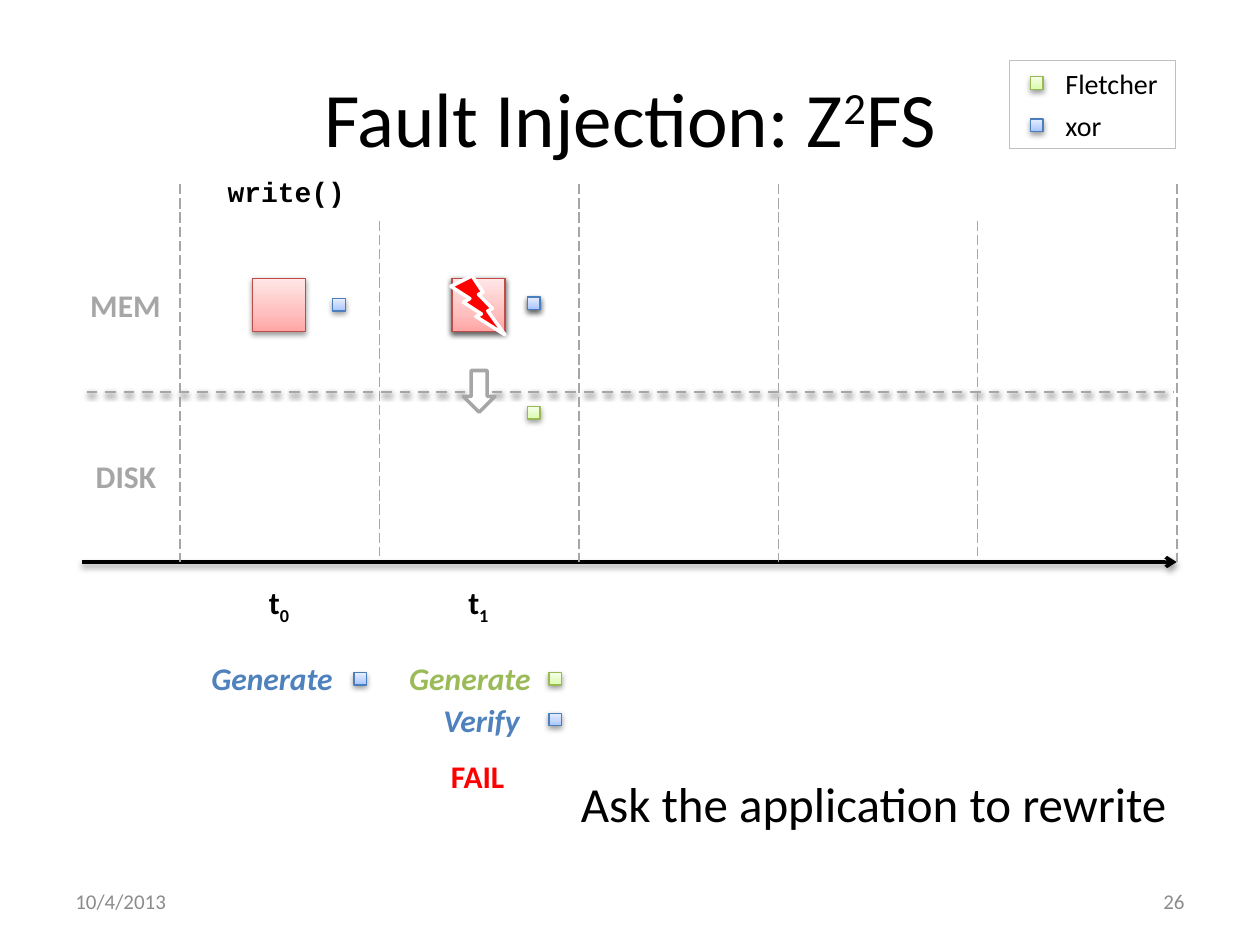
import copy

import pptx
import pptx.dml.color
import pptx.enum.dml
import pptx.enum.shapes
import pptx.enum.text
import pptx.oxml
import pptx.oxml.ns
import pptx.util

Cm, Pt = pptx.util.Cm, pptx.util.Pt
RGBColor = pptx.dml.color.RGBColor
Shapes = pptx.enum.shapes.MSO_SHAPE
Align = pptx.enum.text.PP_ALIGN
Anchor = pptx.enum.text.MSO_ANCHOR
Dash = pptx.enum.dml.MSO_LINE
qn = pptx.oxml.ns.qn

BLACK = RGBColor(0x00, 0x00, 0x00)
WHITE = RGBColor(0xFF, 0xFF, 0xFF)
RED = RGBColor(0xFF, 0x00, 0x00)
GRAY = RGBColor(0xA6, 0xA6, 0xA6)
FRAME_GRAY = RGBColor(0xBF, 0xBF, 0xBF)
FOOTER_GRAY = RGBColor(0x8C, 0x8C, 0x8C)
BLUE = RGBColor(0x4F, 0x81, 0xBD)
GREEN = RGBColor(0x9B, 0xBB, 0x59)

# Outline colour, then gradient colours from bottom to top
XOR = (RGBColor(0x4B, 0x7E, 0xBC), (RGBColor(0xA4, 0xC4, 0xFF),
       RGBColor(0xBF, 0xD4, 0xFF), RGBColor(0xE6, 0xEE, 0xFF)))
FLETCHER = (RGBColor(0x98, 0xB9, 0x55), (RGBColor(0xDA, 0xFD, 0xA7),
            RGBColor(0xE4, 0xFC, 0xC2), RGBColor(0xF5, 0xFF, 0xE7)))
DATA = (RGBColor(0xBF, 0x4C, 0x48), (RGBColor(0xFF, 0xA6, 0xA5),
        RGBColor(0xFF, 0xC0, 0xBF), RGBColor(0xFF, 0xE7, 0xE7)))
STOPS = (0, 0.35, 1)

SHADOW = (
    f'<a:effectLst {pptx.oxml.ns.nsdecls("a")}>'
    '<a:outerShdw blurRad="40000" dist="20000" dir="5400000" rotWithShape="0">'
    '<a:srgbClr val="000000"><a:alpha val="38000"/></a:srgbClr>'
    '</a:outerShdw></a:effectLst>')
NO_SHADOW = f'<a:effectLst {pptx.oxml.ns.nsdecls("a")}/>'

COLUMN_LEFT, COLUMN_WIDTH = 3.63, 4.02
BLOCK, CHECKSUM = 1.07, 0.25
T0, T1 = (COLUMN_LEFT + COLUMN_WIDTH * (i + 0.5) for i in range(2))


class Diagram:
    def __init__(self, slide, font="Calibri"):
        self.slide = slide
        self.font = font

    def text(self, runs, left, top, width, height, size, color=BLACK,
             align=Align.LEFT, anchor=Anchor.TOP, wrap=True, **style):
        """Add one paragraph; runs is a string or (text, baseline percent) pairs."""
        box = self.slide.shapes.add_textbox(Cm(left), Cm(top), Cm(width), Cm(height))
        frame_format = {"word_wrap": wrap, "vertical_anchor": anchor}
        for name, value in frame_format.items():
            setattr(box.text_frame, name, value)
        paragraph = box.text_frame.paragraphs[0]
        paragraph.alignment = align
        font_format = {"name": self.font, "size": Pt(size), **style}
        for words, baseline in [(runs, 0)] if isinstance(runs, str) else runs:
            run = paragraph.add_run()
            run.text = words
            for name, value in font_format.items():
                setattr(run.font, name, value)
            run.font.color.rgb = color
            if baseline:
                run._r.get_or_add_rPr().set("baseline", str(baseline * 1000))

    def shape(self, kind, left, top, width, height, fill, outline, weight=0.75):
        shape = self.slide.shapes.add_shape(
            kind, Cm(left), Cm(top), Cm(width), Cm(height))
        shape.shadow.inherit = False
        shape.line.color.rgb = outline
        shape.line.width = Pt(weight)
        if fill is not None:
            shape.fill.solid()
            shape.fill.fore_color.rgb = fill
        return shape

    def tile(self, palette, left, top, side=CHECKSUM):
        """Add a square with a vertical gradient and a soft shadow."""
        outline, shades = palette
        square = self.shape(Shapes.RECTANGLE, left, top, side, side, None, outline)
        square.fill.gradient()
        square.fill.gradient_angle = 90
        properties = square._element.spPr
        stop_list = properties.find(".//" + qn("a:gsLst"))
        stop_list.insert(1, copy.deepcopy(stop_list[0]))
        for stop, position, shade in zip(square.fill.gradient_stops, STOPS, shades):
            stop.position = position
            stop.color.rgb = shade
        properties.remove(properties.find(qn("a:effectLst")))
        properties.append(pptx.oxml.parse_xml(SHADOW))

    def line(self, x1, y1, x2, y2, color, weight, dash=None, shadow=False, arrow=False):
        line = self.slide.shapes.add_connector(
            pptx.enum.shapes.MSO_CONNECTOR.STRAIGHT, Cm(x1), Cm(y1), Cm(x2), Cm(y2))
        line.line.color.rgb = color
        line.line.width = Pt(weight)
        if dash is not None:
            line.line.dash_style = dash
        if arrow:
            line.line._get_or_add_ln().append(pptx.oxml.parse_xml(
                f'<a:tailEnd {pptx.oxml.ns.nsdecls("a")} type="arrow"/>'))
        line._element.spPr.append(
            pptx.oxml.parse_xml(SHADOW if shadow else NO_SHADOW))


def draw_timeline(diagram):
    diagram.line(1.75, 7.9, 23.65, 7.9, GRAY, 1.5, Dash.DASH, shadow=True)
    for label, left, top, width in (("MEM", 1.57, 5.64, 1.96), ("DISK", 1.68, 9.09, 1.75)):
        diagram.text(label, left, top, width, 1.02, 18, GRAY, wrap=False, bold=True)
    diagram.line(1.65, 11.33, 23.72, 11.33, BLACK, 2, shadow=True, arrow=True)
    for i in range(6):
        x = COLUMN_LEFT + COLUMN_WIDTH * i
        top, bottom = (4.45, 11.2) if i in (1, 4) else (3.71, 11.33)
        diagram.line(x, top, x, bottom, GRAY, 0.75, Dash.LONG_DASH)
    for index, center in enumerate((T0, T1)):
        diagram.text([("t", 0), (str(index), -25)], center - 0.55, 11.63, BLOCK, 1.07,
                     18, align=Align.CENTER, bold=True)


def draw_write_and_fault(diagram):
    diagram.text("write()", 4.34, 3.4, 3.2, 0.94, 16, name="Courier New", bold=True)
    for center in (T0, T1, T1):
        diagram.tile(DATA, center - 0.55, 5.61, BLOCK)
    diagram.shape(Shapes.DOWN_ARROW, T1 - 0.32, 7.47, 0.64, 0.84, WHITE, GRAY, 2)
    for palette, left, top in ((XOR, 6.71, 6.02), (XOR, 10.64, 5.99),
                               (XOR, 10.64, 5.99), (FLETCHER, 10.64, 8.2)):
        diagram.tile(palette, left, top)
    diagram.shape(Shapes.LIGHTNING_BOLT, 9.09, 5.56, 1.09, 1.19, RED, WHITE, 2)


def draw_checks(diagram):
    for label, left, top, width, color, palette, tile_left, tile_top in (
            ("Generate", 4.01, 13.16, 3, BLUE, XOR, 7.14, 13.56),
            ("Generate", 8, 13.16, 3, GREEN, FLETCHER, 11.07, 13.56),
            ("Verify", 8.69, 14, 2.11, BLUE, XOR, 11.07, 14.38)):
        diagram.text(label, left, top, width, 1.02, 18, color, bold=True, italic=True)
        diagram.tile(palette, tile_left, tile_top)
    diagram.text("FAIL", 8.84, 15.14, 1.6, 1.07, 18, RED, bold=True)
    diagram.text("Ask the application to rewrite", 11.46, 15.47, 12.67, 1.45, 28)


def draw_legend(diagram):
    diagram.shape(Shapes.RECTANGLE, 20.35, 1.22, 3.35, 1.78, WHITE, FRAME_GRAY)
    for i, (label, palette) in enumerate((("Fletcher", FLETCHER), ("xor", XOR))):
        top = 1.22 + 0.85 * i
        diagram.tile(palette, 20.78, top + 0.33)
        diagram.text(label, 21.23, top, 2.74, 0.94, 16)


def main():
    deck = pptx.Presentation()
    deck.slide_width, deck.slide_height = Cm(25.4), Cm(19.05)
    diagram = Diagram(deck.slides.add_slide(deck.slide_layouts[6]))
    diagram.text([("Fault Injection: Z", 0), ("2", 30), ("FS", 0)], 1.27, 0.76, 22.86, 3.18,
                 44, align=Align.CENTER, anchor=Anchor.MIDDLE)
    for words, left, align in (("10/4/2013", 1.27, Align.LEFT), ("26", 18.21, Align.RIGHT)):
        diagram.text(words, left, 17.65, 5.92, 1.02, 12, FOOTER_GRAY, align, Anchor.MIDDLE)
    draw_timeline(diagram)
    draw_write_and_fault(diagram)
    draw_checks(diagram)
    draw_legend(diagram)
    deck.save("out.pptx")


if __name__ == "__main__":
    main()
